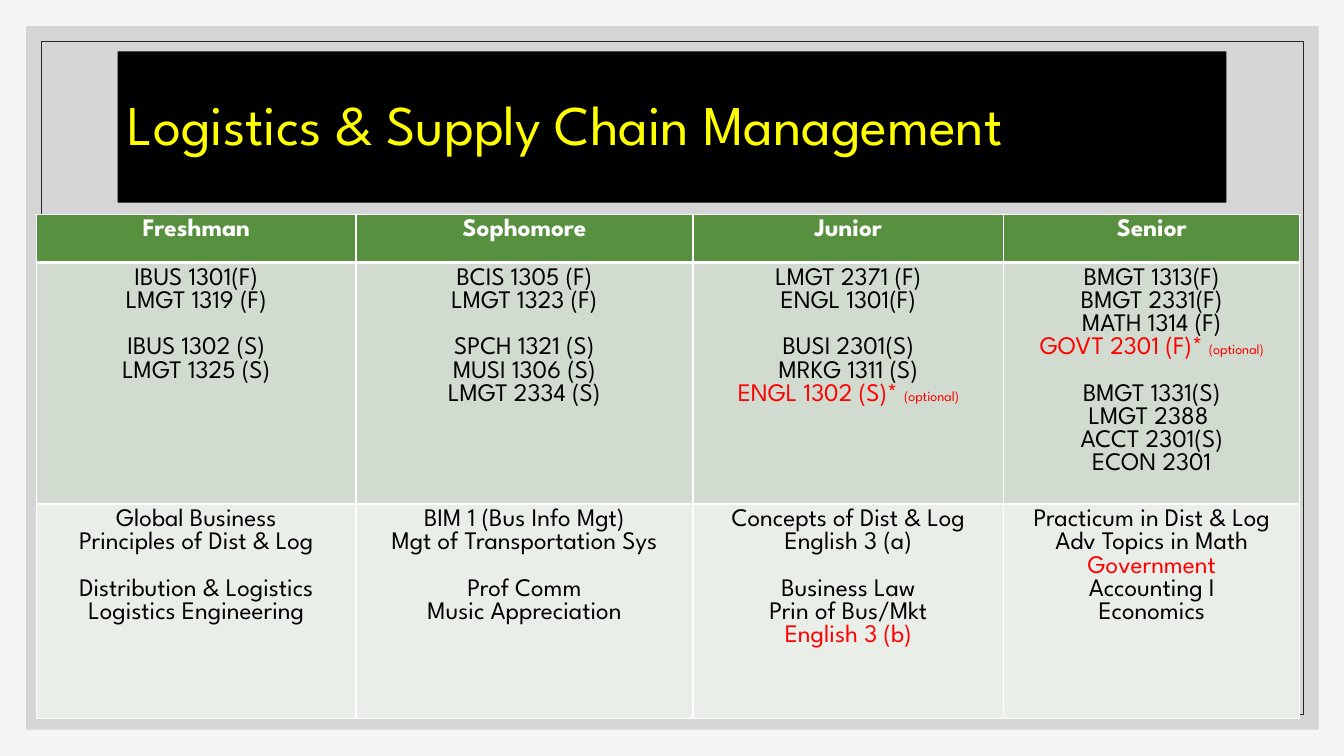
from lxml.etree import SubElement
from pptx import Presentation
from pptx.dml.color import RGBColor
from pptx.enum.shapes import MSO_SHAPE
from pptx.enum.text import MSO_ANCHOR, PP_ALIGN
from pptx.oxml import parse_xml
from pptx.oxml.ns import nsdecls, qn
from pptx.util import Emu, Pt

EMU_PER_PX = 9525
FONT = "League Spartan"
BLACK, WHITE, RED, YELLOW = "000000", "FFFFFF", "FF0000", "FFFF00"
LINE_GAP = 16.6

YEARS = ["Freshman", "Sophomore", "Junior", "Senior"]
COLLEGE_COURSES = [
    [["IBUS 1301(F)", "LMGT 1319 (F)"],
     ["IBUS 1302 (S)", "LMGT 1325 (S)"]],
    [["BCIS 1305 (F)", "LMGT 1323 (F)"],
     ["SPCH 1321 (S)", "MUSI 1306 (S)", "LMGT 2334 (S)"]],
    [["LMGT 2371 (F)", "ENGL 1301(F)"],
     ["BUSI 2301(S)", "MRKG 1311 (S)", "ENGL 1302 (S)* "]],
    [["BMGT 1313(F)", "BMGT 2331(F)", "MATH 1314 (F)", "GOVT 2301 (F)* "],
     ["BMGT 1331(S)", "LMGT 2388 ", "ACCT 2301(S)", "ECON 2301"]],
]
SCHOOL_COURSES = [
    [["Global Business", "Principles of Dist & Log"],
     ["Distribution & Logistics", "Logistics Engineering"]],
    [["BIM 1 (Bus Info Mgt)", "Mgt of Transportation Sys"],
     ["Prof Comm", "Music Appreciation"]],
    [["Concepts of Dist & Log", "English 3 (a)"],
     ["Business Law", "Prin of Bus/Mkt", "English 3 (b)"]],
    [["Practicum in Dist & Log", "Adv Topics in Math", "Government",
      "Accounting I", "Economics"]],
]
OPTIONAL_NOTES = {
    "ENGL 1302 (S)* ": "(optional)",
    "GOVT 2301 (F)* ": "(optional)",
    "English 3 (b)": "",
    "Government": "",
}
COLUMN_WIDTHS = [304, 321, 296, 282]
ROW_HEIGHTS = [46, 230, 204]
ROW_FILLS = ["57903F", "D1DBCF", "EAEEE8"]


def px(length):
    return Emu(length * EMU_PER_PX)


def paint(fill, color):
    fill.solid()
    fill.fore_color.rgb = RGBColor.from_string(color)


def add_run(paragraph, text, size, color, bold=False):
    run = paragraph.add_run()
    run.text = text
    run.font.name = FONT
    run.font.size = Pt(size)
    run.font.bold = bold
    run.font.color.rgb = RGBColor.from_string(color)


def add_panel(slide, left, top, width, height):
    panel = slide.shapes.add_shape(
        MSO_SHAPE.RECTANGLE, px(left), px(top), px(width), px(height))
    panel.shadow.inherit = False
    return panel


def add_frame(slide):
    backing = add_panel(slide, 25, 25, 1231, 670)
    paint(backing.fill, "BFBFBF")
    backing.line.fill.background()
    tint = backing.fill._xPr.find(qn("a:solidFill"))[0]
    SubElement(tint, qn("a:alpha"), val="60000")

    outline = add_panel(slide, 39, 39, 1202, 641)
    outline.fill.background()
    outline.line.color.rgb = RGBColor.from_string("262626")
    outline.line.width = Pt(0.5)


def set_title(slide, text):
    title = slide.shapes.title
    title.left, title.top = px(112), px(49)
    title.width, title.height = px(1056), px(144)
    paint(title.fill, BLACK)
    title.text_frame.vertical_anchor = MSO_ANCHOR.MIDDLE
    heading = title.text_frame.paragraphs[0]
    heading.alignment = PP_ALIGN.LEFT
    heading.line_spacing = 0.9
    add_run(heading, text, 40, YELLOW)
    title.element.getparent().append(title.element)


def set_borders(cell, top, bottom):
    properties = cell._tc.get_or_add_tcPr()
    widths = {"lnL": 1, "lnR": 1, "lnT": top, "lnB": bottom}
    for position, (side, width) in enumerate(widths.items()):
        properties.insert(position, parse_xml(
            f'<a:{side} {nsdecls("a")} w="{Pt(width)}"><a:solidFill>'
            f'<a:srgbClr val="{WHITE}"/></a:solidFill></a:{side}>'))


def fill_courses(cell, terms):
    paragraph = None
    for term_index, term in enumerate(terms):
        for course_index, course in enumerate(term):
            if paragraph is None:
                paragraph = cell.text_frame.paragraphs[0]
            else:
                paragraph = cell.text_frame.add_paragraph()
            paragraph.alignment = PP_ALIGN.CENTER
            if term_index and not course_index:
                paragraph.space_before = Pt(LINE_GAP)
            optional = course in OPTIONAL_NOTES
            add_run(paragraph, course, 18, RED if optional else BLACK)
            if OPTIONAL_NOTES.get(course):
                add_run(paragraph, OPTIONAL_NOTES[course], 10, RED)


def add_plan(slide):
    plan = slide.shapes.add_table(
        len(ROW_HEIGHTS), len(YEARS), px(35), px(204),
        px(sum(COLUMN_WIDTHS)), px(sum(ROW_HEIGHTS))).table
    for column, width in zip(plan.columns, COLUMN_WIDTHS):
        column.width = px(width)
    for row_index, row in enumerate(plan.rows):
        row.height = px(ROW_HEIGHTS[row_index])
        for cell in row.cells:
            paint(cell.fill, ROW_FILLS[row_index])
            set_borders(cell, 3 if row_index == 1 else 1,
                        3 if row_index == 0 else 1)
    for column_index, year in enumerate(YEARS):
        header = plan.cell(0, column_index).text_frame.paragraphs[0]
        header.alignment = PP_ALIGN.CENTER
        add_run(header, year, 18, WHITE, bold=True)
        fill_courses(plan.cell(1, column_index), COLLEGE_COURSES[column_index])
        fill_courses(plan.cell(2, column_index), SCHOOL_COURSES[column_index])


def main():
    deck = Presentation()
    deck.slide_width, deck.slide_height = px(1280), px(720)
    slide = deck.slides.add_slide(deck.slide_layouts[5])
    paint(slide.background.fill, "F5F6F4")
    add_frame(slide)
    set_title(slide, "Logistics & Supply Chain Management")
    add_plan(slide)
    deck.save("out.pptx")


if __name__ == "__main__":
    main()
